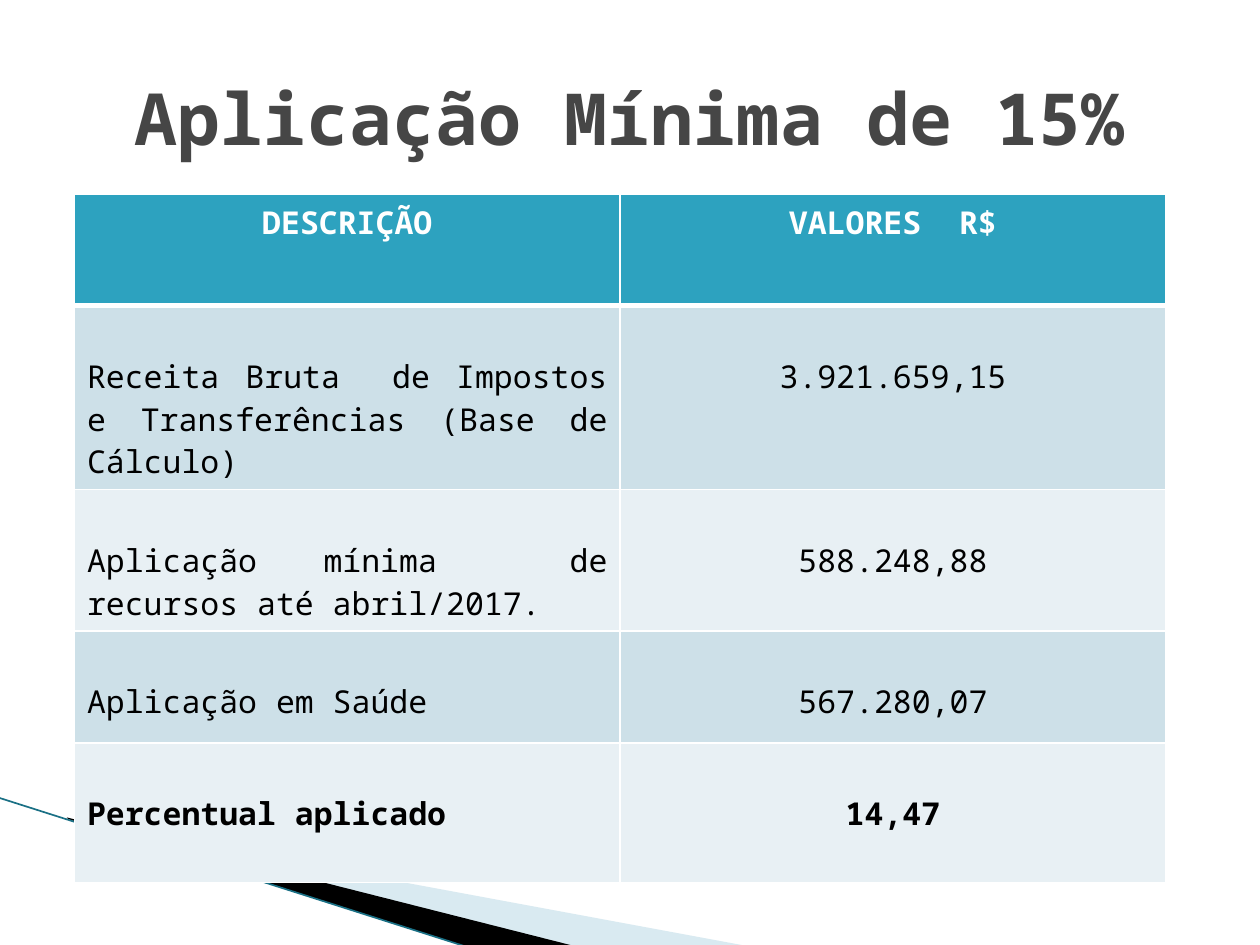
from lxml import etree
from pptx import Presentation
from pptx import util as u
from pptx.dml.color import RGBColor
from pptx.enum import shapes, text
from pptx.oxml.ns import qn

FONT = "Noto Sans Mono"
COLORS = {
    "title": "464646", "header": "2DA2BF", "odd": "CDE0E8", "even": "E8F0F4",
    "white": "FFFFFF", "black": "000000", "pale": "A0CBDC", "edge": "1A7085",
}
TITLE = "Aplicação Mínima de 15%"
HEADER = ("DESCRIÇÃO", "VALORES  R$")
ROWS = [
    ("Receita Bruta  de Impostos e Transferências (Base de Cálculo)", "3.921.659,15"),
    ("Aplicação mínima  de recursos até abril/2017.", "588.248,88"),
    ("Aplicação em Saúde", "567.280,07"),
    ("Percentual aplicado", "14,47"),
]
ROW_HEIGHTS = [2.24, 3.7, 2.84, 2.26, 2.82]
COLUMN_WIDTH = 11
BANDS = [
    ("pale", 40, [(1.4, 16.54), (15.11, 19.08), (11.58, 19.08), (1.4, 16.51)]),
    ("black", 100, [(1.35, 16.48), (11.61, 19.08), (9.45, 19.1), (1.37, 16.51)]),
]


def rgb(name):
    return RGBColor.from_string(COLORS[name])


def write(frame, content, size=18, color="black", bold=False,
          align=text.PP_ALIGN.CENTER):
    paragraph = frame.paragraphs[0]
    paragraph.alignment = align
    run = paragraph.add_run()
    run.text = content
    run.font.name = FONT
    run.font.size = u.Pt(size)
    run.font.bold = bold
    run.font.color.rgb = rgb(color)


def add_band(slide, color, opacity, points):
    corners = [(u.Cm(x), u.Cm(y)) for x, y in points]
    builder = slide.shapes.build_freeform(*corners[0])
    builder.add_line_segments(corners[1:], close=True)
    shape = builder.convert_to_shape()
    shape.shadow.inherit = False
    shape.line.fill.background()
    shape.fill.solid()
    shape.fill.fore_color.rgb = rgb(color)
    if opacity < 100:
        fill_color = shape.fill._xPr.find(qn("a:solidFill"))[0]
        etree.SubElement(fill_color, qn("a:alpha"), val=str(opacity * 1000))


def add_edge(slide):
    edge = slide.shapes.add_connector(
        shapes.MSO_CONNECTOR.STRAIGHT,
        u.Cm(-0.03), u.Cm(16.08), u.Cm(9.45), u.Cm(19.1))
    edge.line.color.rgb = rgb("edge")
    edge.line.width = u.Pt(0.95)
    etree.SubElement(edge._element.spPr, qn("a:effectLst"))


def set_borders(cell, **widths):
    """Draw white borders; widths maps lnL, lnR, lnT and lnB to points."""
    properties = cell._tc.get_or_add_tcPr()
    for index, (side, width) in enumerate(widths.items()):
        line = etree.Element(qn(f"a:{side}"), w=str(u.Pt(width)))
        fill = etree.SubElement(line, qn("a:solidFill"))
        etree.SubElement(fill, qn("a:srgbClr"), val=COLORS["white"])
        properties.insert(index, line)


def add_values_table(slide):
    table = slide.shapes.add_table(
        len(ROWS) + 1, len(HEADER), u.Cm(1.5), u.Cm(3.92),
        u.Cm(COLUMN_WIDTH * len(HEADER)), u.Cm(sum(ROW_HEIGHTS))).table
    for column in table.columns:
        column.width = u.Cm(COLUMN_WIDTH)
    for row, height in zip(table.rows, ROW_HEIGHTS):
        row.height = u.Cm(height)

    for i, values in enumerate([HEADER, *ROWS]):
        is_header = i == 0
        band = "header" if is_header else "odd" if i % 2 else "even"
        for j, value in enumerate(values):
            cell = table.cell(i, j)
            cell.fill.solid()
            cell.fill.fore_color.rgb = rgb(band)
            cell.margin_top = u.Cm(0.13 if is_header else 0.99)
            set_borders(cell, lnL=1, lnR=1, lnT=3 if i == 1 else 1,
                        lnB=3 if is_header else 1)
            justified = j == 0 and not is_header
            write(cell.text_frame, value,
                  color="white" if is_header else "black",
                  bold=i in (0, len(ROWS)),
                  align=text.PP_ALIGN.JUSTIFY if justified else text.PP_ALIGN.CENTER)


def main():
    presentation = Presentation()
    presentation.slide_width, presentation.slide_height = u.Cm(25.4), u.Cm(19.05)
    slide = presentation.slides.add_slide(presentation.slide_layouts[5])
    for band in BANDS:
        add_band(slide, *band)
    add_edge(slide)

    title = slide.shapes.title
    title.left, title.top = u.Cm(1.27), u.Cm(0.76)
    title.width, title.height = u.Cm(22.86), u.Cm(3.18)
    title.text_frame.vertical_anchor = text.MSO_ANCHOR.MIDDLE
    write(title.text_frame, TITLE, size=41, color="title", bold=True)

    add_values_table(slide)
    presentation.save("out.pptx")


if __name__ == "__main__":
    main()
